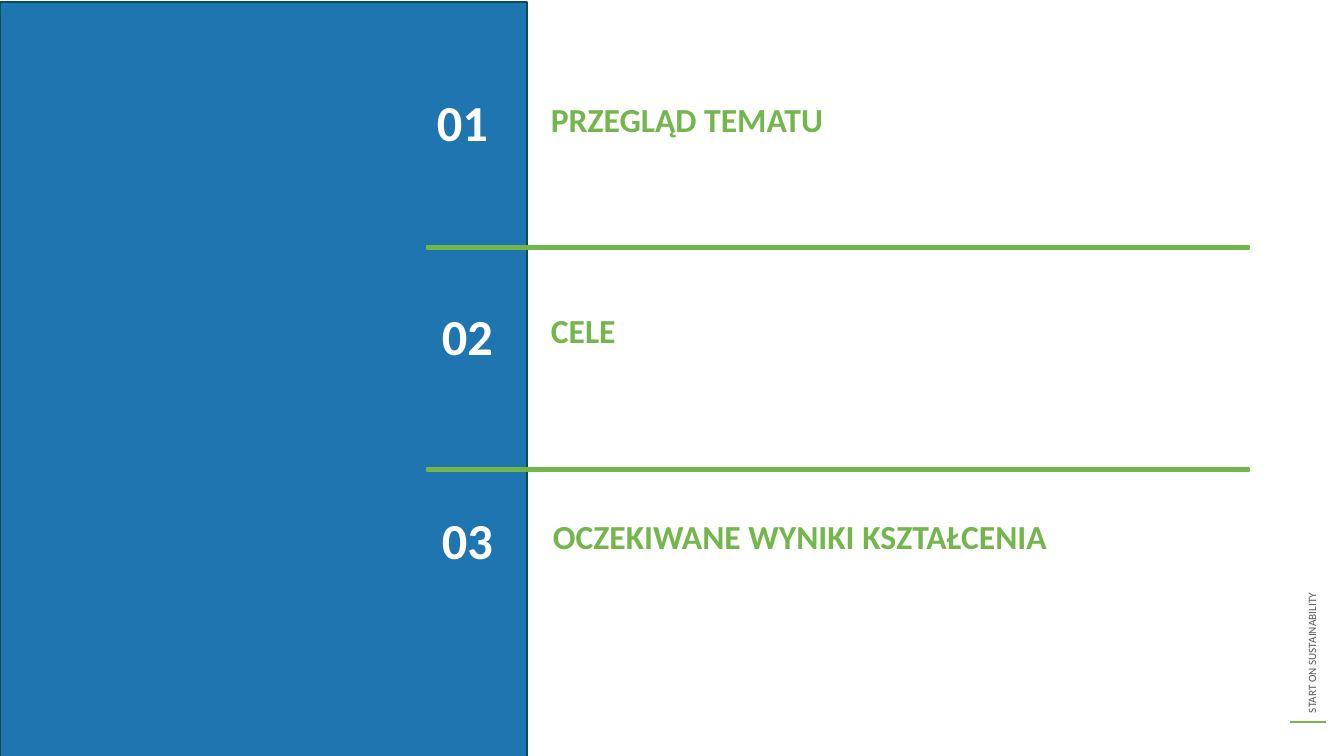
from pptx import Presentation
from pptx.dml.color import RGBColor
from pptx.enum.shapes import MSO_CONNECTOR, MSO_SHAPE
from pptx.enum.text import MSO_ANCHOR
from pptx.util import Pt
from lxml.etree import SubElement
from pptx.oxml.ns import qn

PX = 914400 / 100.8
GREEN, BLUE, DARK, GREY, WHITE = "73B64B", "1E75B0", "054F50", "595959", "FFFFFF"


def px(*lengths):
    return [round(length * PX) for length in lengths]


def color(value):
    return RGBColor.from_string(value)


prs = Presentation()
prs.slide_width, prs.slide_height = px(1344, 756)
slide = prs.slides.add_slide(prs.slide_layouts[6])
shapes = slide.shapes

# Blue side panel and the two green dividers
bars = [
    (0, 2, 527, 756, BLUE, DARK),
    (427, 246, 822, 3, GREEN, GREEN),
    (427, 468, 822, 3, GREEN, GREEN),
]
for left, top, width, height, fill, outline in bars:
    bar = shapes.add_shape(MSO_SHAPE.RECTANGLE, *px(left, top, width, height))
    bar.shadow.inherit = False
    bar.fill.solid()
    bar.fill.fore_color.rgb = color(fill)
    bar.line.color.rgb = color(outline)
    bar.line.width = Pt(1)

# Numbered agenda and the vertical programme name:
# text, left, top, width, height, size, colour, bold, line spacing, rotation
texts = [("START ON SUSTAINABILITY", 1087, 486, 450, 24, 8, GREY, False, 1.0, 270)]
agenda = [
    ("01", 427, 68, "PRZEGLĄD TEMATU", 541, 94),
    ("02", 432, 282, "CELE", 541, 305),
    ("03", 432, 486, "OCZEKIWANE WYNIKI KSZTAŁCENIA", 543, 511),
]
for number, number_x, number_y, topic, topic_x, topic_y in agenda:
    texts.append((number, number_x, number_y, 136, 106, 36, WHITE, True, 1.3, 0))
    texts.append((topic, topic_x, topic_y, 724, 37, 24, GREEN, True, 1.0, 0))

for wording, left, top, width, height, size, ink, bold, spacing, rotation in texts:
    box = shapes.add_textbox(*px(left, top, width, height))
    box.rotation = rotation
    frame = box.text_frame
    frame.word_wrap = True
    frame.vertical_anchor = MSO_ANCHOR.TOP
    paragraph = frame.paragraphs[0]
    paragraph.line_spacing = spacing
    run = paragraph.add_run()
    run.text = wording
    run.font.name = "Calibri"
    run.font.size = Pt(size)
    run.font.bold = bold
    run.font.color.rgb = color(ink)

# Short line under the programme name
footer_line = shapes.add_connector(MSO_CONNECTOR.STRAIGHT, *px(1290, 722, 1326, 722))
footer_line.line.color.rgb = color(GREEN)
footer_line.line.width = Pt(1)
SubElement(footer_line._element.spPr, qn("a:effectLst"))

prs.save("out.pptx")
